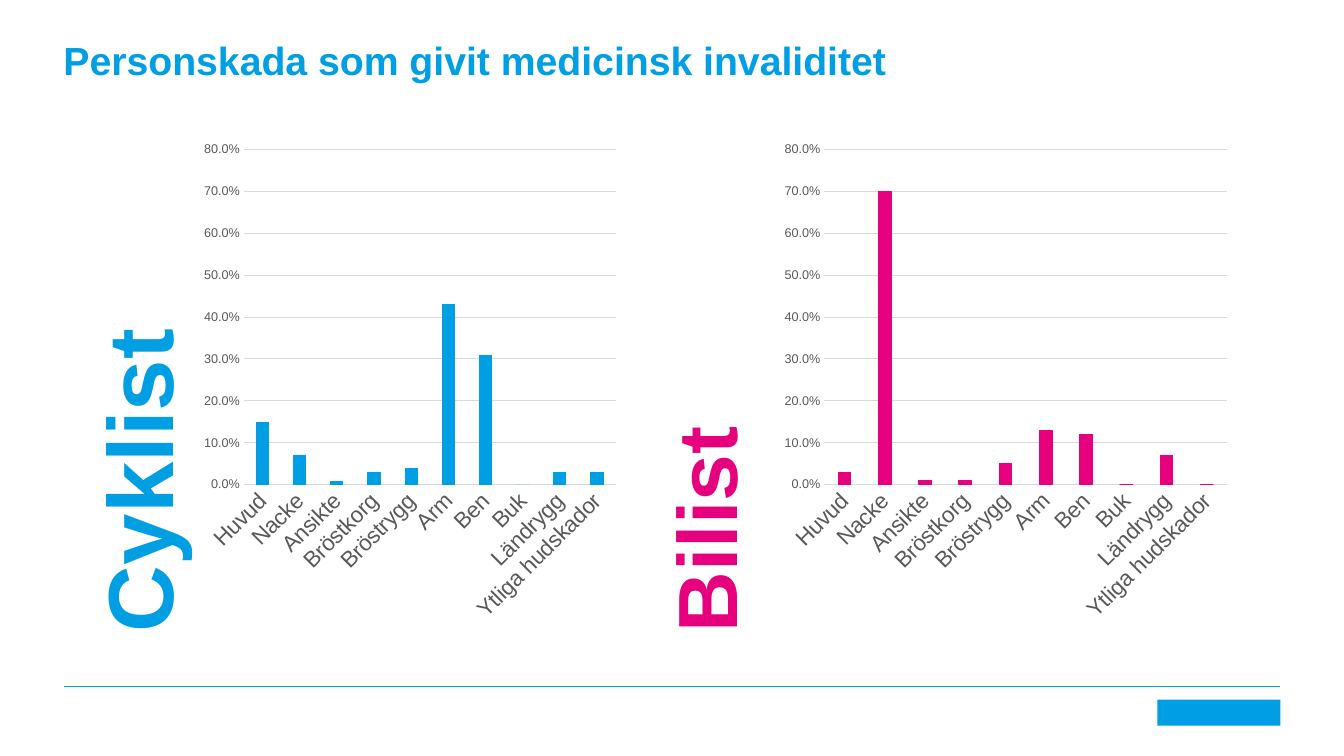
from pptx import Presentation
from pptx import util as u
from pptx.chart.data import CategoryChartData
from pptx.dml.color import RGBColor
from pptx.enum import chart as ch, shapes, text
from pptx.oxml.ns import qn
from lxml import etree

BLUE, PINK, GRID, LABEL = "009FE4", "E6007E", "D9D9D9", "595959"
INJURIES = ["Huvud", "Nacke", "Ansikte", "Bröstkorg", "Bröstrygg",
            "Arm", "Ben", "Buk", "Ländrygg", "Ytliga hudskador"]
GROUPS = [
    dict(name="Cyklist", size=66, color=BLUE, gap=182, overlap=0, outlined=False,
         label_left=0.8, label_height=1.05, box=(1.94, 1.31, 4.25, 4.96),
         shares=[0.15, 0.07, 0.01, 0.03, 0.04, 0.43, 0.31, 0, 0.03, 0.03]),
    dict(name="Bilist", size=60, color=PINK, gap=219, overlap=-27, outlined=True,
         label_left=6.48, label_height=0.95, box=(7.69, 1.31, 4.57, 4.96),
         shares=[0.03, 0.7, 0.01, 0.01, 0.05, 0.13, 0.12, 0, 0.07, 0]),
]


def rgb(value):
    """Turn a hex string into a colour."""
    return RGBColor.from_string(value)


def set_font(font, color, **values):
    """Apply Arial, a colour and further format values to a font."""
    for key, value in dict(name="Arial", **values).items():
        setattr(font, key, value)
    font.color.rgb = rgb(color)


def set_line(line, color, width):
    """Give a line its colour and width in points."""
    line.color.rgb = rgb(color)
    line.width = u.Pt(width)


def add_heading(slide, box, wording, size, color, rotation=0):
    """Place bold text in a box without margins, turned about its centre."""
    heading = slide.shapes.add_textbox(*map(u.Inches, box))
    heading.rotation = rotation
    frame = heading.text_frame
    settings = dict(margin_left=0, margin_top=0, margin_right=0, margin_bottom=0,
                    word_wrap=True, vertical_anchor=text.MSO_ANCHOR.TOP)
    for key, value in settings.items():
        setattr(frame, key, value)
    run = frame.paragraphs[0].add_run()
    run.text = wording
    set_font(run.font, color, size=u.Pt(size), bold=True)


def add_injury_chart(slide, group):
    """Place the column chart of one road user group in its box."""
    data = CategoryChartData(number_format="0.0%")
    data.categories = INJURIES
    data.add_series("Series 1", group["shares"])
    chart = slide.shapes.add_chart(ch.XL_CHART_TYPE.COLUMN_CLUSTERED,
                                   *map(u.Inches, group["box"]), data).chart
    chart.has_title = chart.has_legend = False
    set_font(chart.font, "000000", size=u.Pt(10))

    plot = chart.plots[0]
    for key, value in dict(gap_width=group["gap"], overlap=group["overlap"],
                           vary_by_categories=False).items():
        setattr(plot, key, value)
    columns = plot.series[0].format
    columns.fill.solid()
    columns.fill.fore_color.rgb = rgb(group["color"])
    if group["outlined"]:
        set_line(columns.line, group["color"], 0.75)

    injuries, shares = chart.category_axis, chart.value_axis
    for axis, size in ((injuries, 16), (shares, 9)):
        axis.major_tick_mark = axis.minor_tick_mark = ch.XL_TICK_MARK.NONE
        set_font(axis.tick_labels.font, LABEL, size=u.Pt(size))
    set_line(injuries.format.line, GRID, 0.75)
    injuries._element.find(qn("c:txPr")).find(qn("a:bodyPr")).set("rot", "-2700000")
    for key, value in dict(minimum_scale=0, maximum_scale=0.8, major_unit=0.1).items():
        setattr(shares, key, value)
    shares.format.line.fill.background()
    set_line(shares.major_gridlines.format.line, GRID, 0.75)
    shares.tick_labels.number_format = "0.0%"
    shares.tick_labels.number_format_is_linked = False


def add_group(slide, group):
    """Place a group's upright name and its chart on a shared bottom edge."""
    left, top, width, height = group["box"]
    length, thickness = 4, group["label_height"]
    label_box = (group["label_left"] + (thickness - length) / 2,
                 top + height - (length + thickness) / 2, length, thickness)
    add_heading(slide, label_box, group["name"], group["size"], group["color"], 270)
    add_injury_chart(slide, group)


def add_footer(slide, left, top, width):
    """Draw the footer rule and a plain mark at its right end."""
    right = left + width
    rule = slide.shapes.add_connector(shapes.MSO_CONNECTOR.STRAIGHT,
                                      *map(u.Inches, (left, top, right, top)))
    set_line(rule.line, BLUE, 0.5)
    etree.SubElement(rule._element.spPr, qn("a:effectLst"))
    mark_box = (right - 1.22, top + 0.13, 1.22, 0.26)
    mark = slide.shapes.add_shape(shapes.MSO_SHAPE.RECTANGLE, *map(u.Inches, mark_box))
    mark.shadow.inherit = False
    mark.fill.solid()
    mark.fill.fore_color.rgb = rgb(BLUE)
    mark.line.fill.background()


def main():
    """Build the slide and save it."""
    deck = Presentation()
    deck.slide_width, deck.slide_height = u.Inches(13.33), u.Inches(7.5)
    slide = deck.slides.add_slide(deck.slide_layouts[6])
    add_footer(slide, 0.63, 6.81, 12.07)
    for group in GROUPS:
        add_group(slide, group)
    add_heading(slide, (0.63, 0.36, 12.07, 0.5),
                "Personskada som givit medicinsk invaliditet", 28, BLUE)
    deck.save("out.pptx")


if __name__ == "__main__":
    main()
